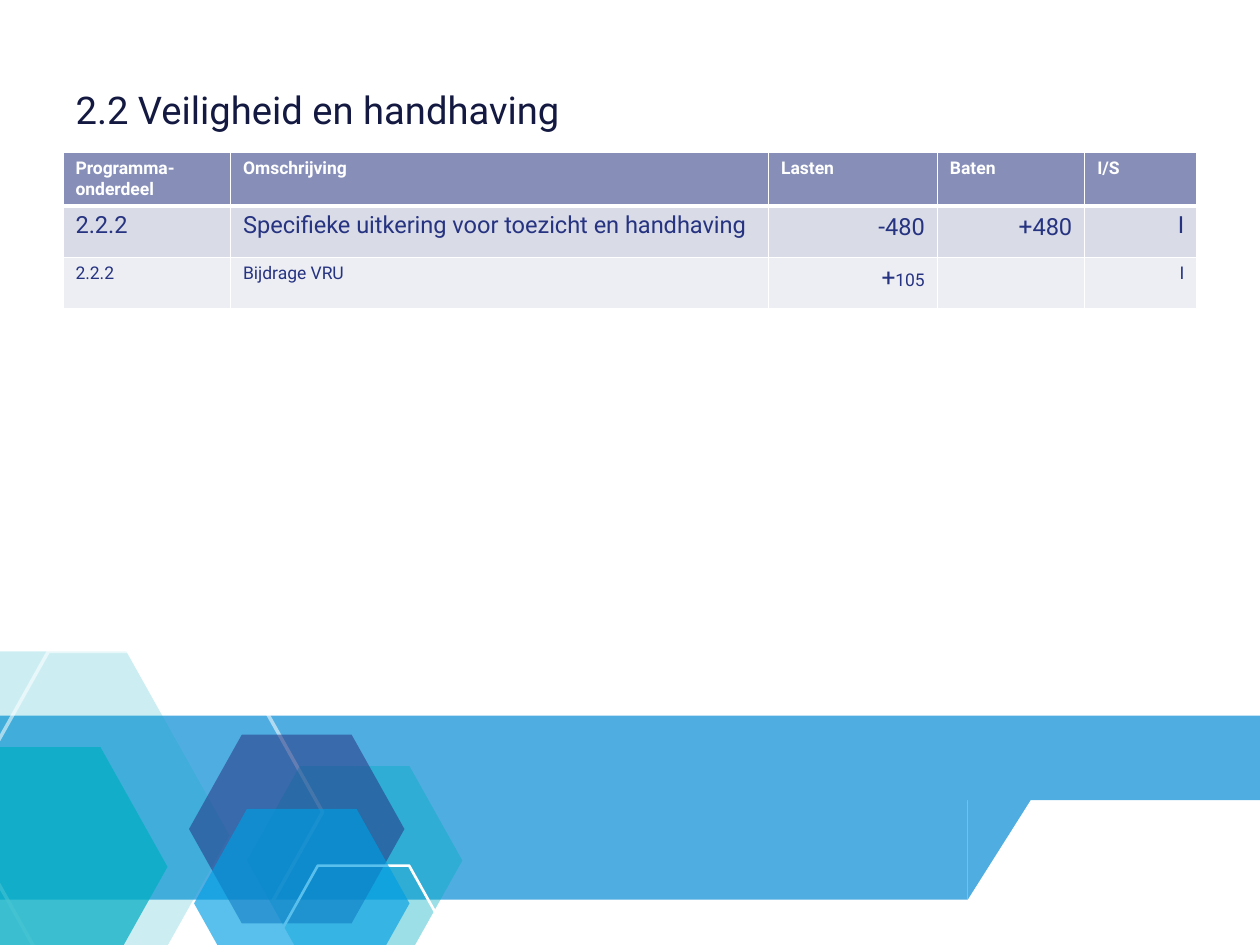
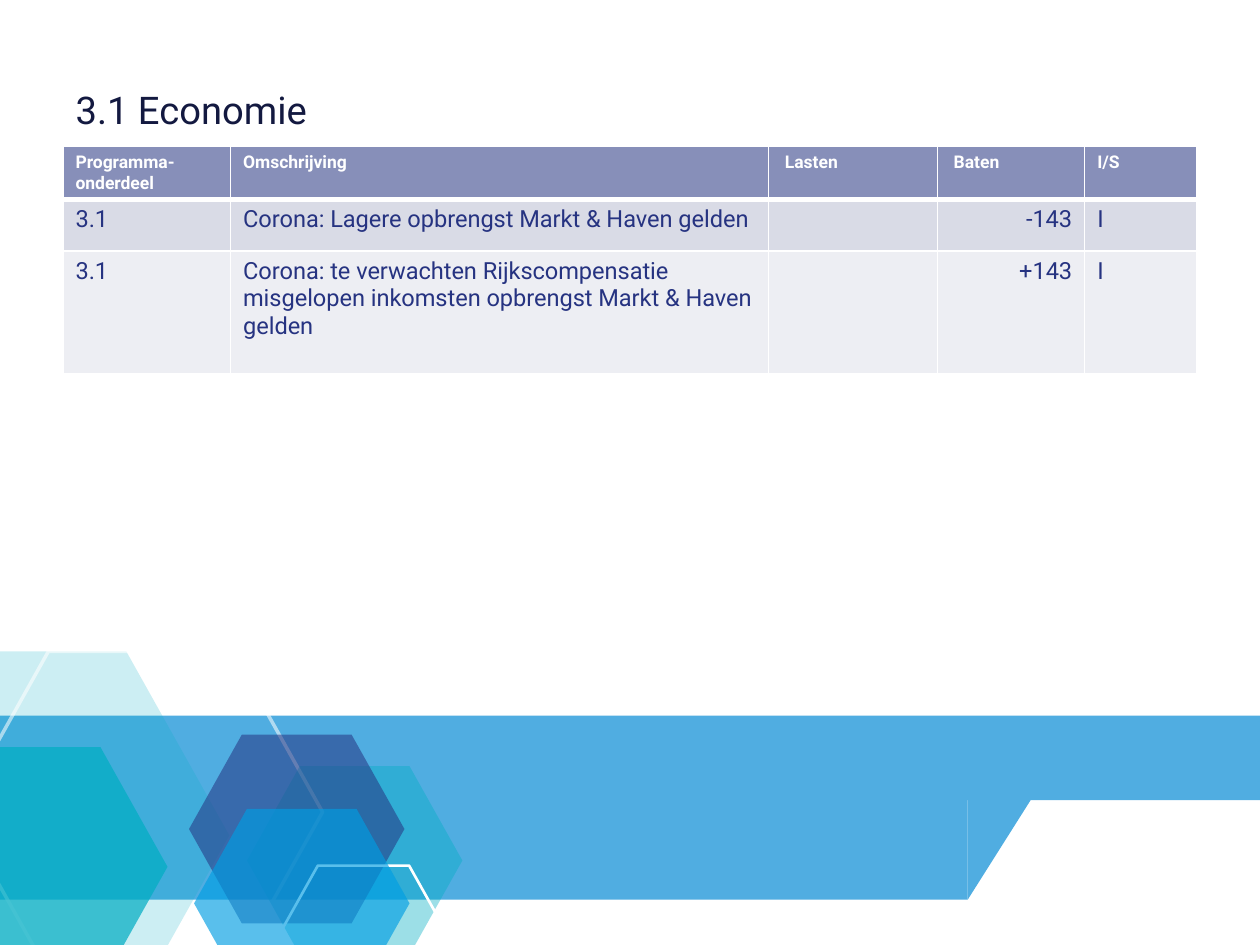
from dataclasses import dataclass

from lxml import etree
from pptx import Presentation
from pptx.dml.color import RGBColor
from pptx.enum.shapes import MSO_SHAPE
from pptx.enum.text import MSO_ANCHOR, MSO_AUTO_SIZE, PP_ALIGN
from pptx.oxml.ns import qn
from pptx.util import Inches, Pt

LEFT, RIGHT = PP_ALIGN.LEFT, PP_ALIGN.RIGHT
RECTANGLE, HEXAGON = MSO_SHAPE.RECTANGLE, MSO_SHAPE.HEXAGON
SNIPPED, TRIANGLE = MSO_SHAPE.SNIP_1_RECTANGLE, MSO_SHAPE.RIGHT_TRIANGLE
MIDDLE, NO_FIT = MSO_ANCHOR.MIDDLE, MSO_AUTO_SIZE.NONE


@dataclass(frozen=True)
class Theme:
    font: str = "Roboto"
    white: str = "FFFFFF"
    band: str = "50ADE1"
    teal: str = "00ADC3"
    navy: str = "263381"
    blue: str = "009EE3"
    title: str = "131940"
    header: str = "878FB9"
    stripes: tuple = ("D9DBE6", "EDEEF3")
    title_size: float = 21.8
    header_size: float = 10
    body_size: float = 13.5
    small_size: float = 10
    sign_size: float = 14


THEME = Theme()
HEADERS = ("Programma-onderdeel", "Omschrijving", "Lasten", "Baten", "I/S")
COLUMN_WIDTHS = (1.33, 4.27, 1.34, 1.17, 0.89)
AMOUNT_COLUMNS = (2, 3)
KIND_COLUMN = 4
ROW_HEIGHT = 0.41
CELL_MARGIN = 0.1

SLIDES = [
    {
        "title": "2.2 Veiligheid en handhaving",
        "top": 1.21,
        "amount_header_indent": 0,
        "large_signs": True,
        "kind_align": RIGHT,
        "last_row_height": ROW_HEIGHT,
        "rows": [
            (THEME.body_size, ("2.2.2", "Specifieke uitkering voor toezicht en handhaving",
                               "-480", "+480", "I")),
            (THEME.small_size, ("2.2.2", "Bijdrage VRU", "+105", "", "I")),
        ],
    },
    {
        "title": "3.1 Economie",
        "top": 1.16,
        "amount_header_indent": 0.03,
        "large_signs": False,
        "kind_align": LEFT,
        "last_row_height": 0.97,
        "rows": [
            (THEME.body_size, ("3.1", "Corona: Lagere opbrengst Markt & Haven gelden",
                               "", "-143", "I")),
            (THEME.body_size, ("3.1", "Corona: te verwachten Rijkscompensatie misgelopen "
                                      "inkomsten opbrengst Markt & Haven gelden",
                               "", "+143", "I")),
        ],
    },
]

BANDS = [
    (RECTANGLE, (0, 6.27, 10, 1.23), THEME.white),
    (RECTANGLE, (0, 5.68, 10, 0.67), THEME.band),
    (SNIPPED, (0, 6.27, 7.68, 0.87), THEME.band),
]
CORNER = (7.68, 6.27, 0.55, 0.87)
HEXAGONS = [
    ((-1.5, 5.17, 3.32, 2.92), THEME.teal, 20, None),
    ((-0.33, 5.17, 2.89, 2.55), THEME.white, 55, 2),
    ((1.96, 6.08, 1.71, 1.5), THEME.teal, 39, None),
    ((1.5, 5.83, 1.71, 1.5), THEME.navy, 55, None),
    ((2.17, 6.87, 1.43, 1.26), THEME.white, 100, 1.5),
    ((1.54, 6.42, 1.71, 1.5), THEME.blue, 65, None),
    ((-0.83, 5.93, 2.16, 1.9), THEME.teal, 71, None),
]


def rgb(color):
    return RGBColor.from_string(color)


def add_solid(parent, color, opacity=100):
    solid = etree.SubElement(parent, qn("a:solidFill"))
    tone = etree.SubElement(solid, qn("a:srgbClr"), val=color)
    if opacity < 100:
        etree.SubElement(tone, qn("a:alpha"), val=str(opacity * 1000))


def paint(fill, color, opacity=100):
    fill.solid()
    fill.fore_color.rgb = rgb(color)
    if opacity < 100:
        tone = fill.fore_color._xFill.find(qn("a:srgbClr"))
        etree.SubElement(tone, qn("a:alpha"), val=str(opacity * 1000))


def add_preset(page, preset, place, color, opacity=100, outline=None):
    shape = page.shapes.add_shape(preset, *map(Inches, place))
    shape.shadow.inherit = False
    if outline:
        shape.fill.background()
        shape.line.width = Pt(outline)
        paint(shape.line.fill, color, opacity)
    else:
        shape.line.fill.background()
        paint(shape.fill, color, opacity)
    return shape


def add_decoration(page):
    for preset, place, color in BANDS:
        band = add_preset(page, preset, place, color)
        if preset == SNIPPED:
            band.adjustments[0] = 0
    for place, color, opacity, outline in HEXAGONS:
        hexagon = add_preset(page, HEXAGON, place, color, opacity, outline)
        hexagon.adjustments[0] = 0.28
    corner = add_preset(page, TRIANGLE, CORNER, THEME.band)
    corner.rotation = 180
    corner._element.spPr.find(qn("a:xfrm")).set("flipH", "1")


def style(paragraph, size, color, bold=False, align=LEFT):
    paragraph.alignment = align
    font = paragraph.font
    font.name, font.size, font.bold = THEME.font, Pt(size), bold
    font.color.rgb = rgb(color)


def set_title(page, text):
    title = page.shapes.title
    title.left, title.top, title.width, title.height = map(Inches, (0.5, 0.52, 9, 0.65))
    frame = title.text_frame
    frame.text = text
    frame.vertical_anchor = MIDDLE
    frame.auto_size = NO_FIT
    paragraph = frame.paragraphs[0]
    paragraph.line_spacing = 1.1
    style(paragraph, THEME.title_size, THEME.title)


def dress_cell(cell, color, bottom=1):
    properties = cell._tc.get_or_add_tcPr()
    for side, width in (("L", 1), ("R", 1), ("T", 1), ("B", bottom)):
        border = etree.SubElement(properties, qn(f"a:ln{side}"), w=str(Pt(width)))
        add_solid(border, THEME.white)
    paint(cell.fill, color)


def write_amount(paragraph, text, large_sign):
    if large_sign and text:
        sign = paragraph.add_run()
        sign.text = text[0]
        sign.font.size = Pt(THEME.sign_size)
        text = text[1:]
    if text:
        paragraph.add_run().text = text


def add_budget_table(page, content):
    heights = [ROW_HEIGHT, ROW_HEIGHT, content["last_row_height"]]
    table = page.shapes.add_table(
        len(heights), len(HEADERS), Inches(0.5), Inches(content["top"]),
        Inches(sum(COLUMN_WIDTHS)), Inches(sum(heights))).table
    for column, width in zip(table.columns, COLUMN_WIDTHS):
        column.width = Inches(width)
    for row, height in zip(table.rows, heights):
        row.height = Inches(height)

    for index, header in enumerate(HEADERS):
        cell = table.cell(0, index)
        cell.text = header
        if index in AMOUNT_COLUMNS:
            cell.margin_left = Inches(CELL_MARGIN + content["amount_header_indent"])
        dress_cell(cell, THEME.header, bottom=3)
        style(cell.text_frame.paragraphs[0], THEME.header_size, THEME.white, bold=True)

    aligns = [LEFT, LEFT, RIGHT, RIGHT, content["kind_align"]]
    for number, (size, texts) in enumerate(content["rows"], 1):
        for index, text in enumerate(texts):
            cell = table.cell(number, index)
            dress_cell(cell, THEME.stripes[number - 1])
            paragraph = cell.text_frame.paragraphs[0]
            style(paragraph, size, THEME.navy, align=aligns[index])
            large_sign = content["large_signs"] and index in AMOUNT_COLUMNS
            write_amount(paragraph, text, large_sign)


def main():
    deck = Presentation()
    deck.slide_width, deck.slide_height = Inches(10), Inches(7.5)
    for content in SLIDES:
        page = deck.slides.add_slide(deck.slide_layouts[5])
        add_decoration(page)
        set_title(page, content["title"])
        add_budget_table(page, content)
    deck.save("out.pptx")


if __name__ == "__main__":
    main()
